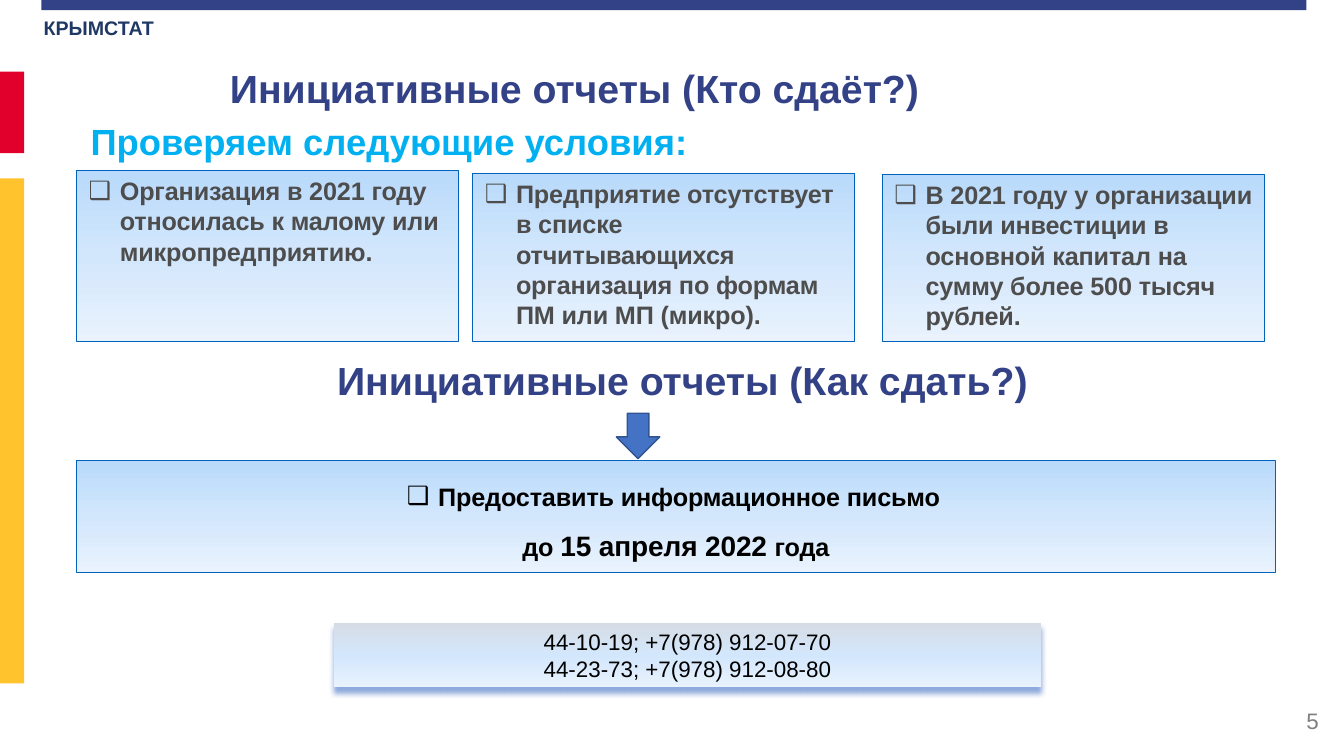
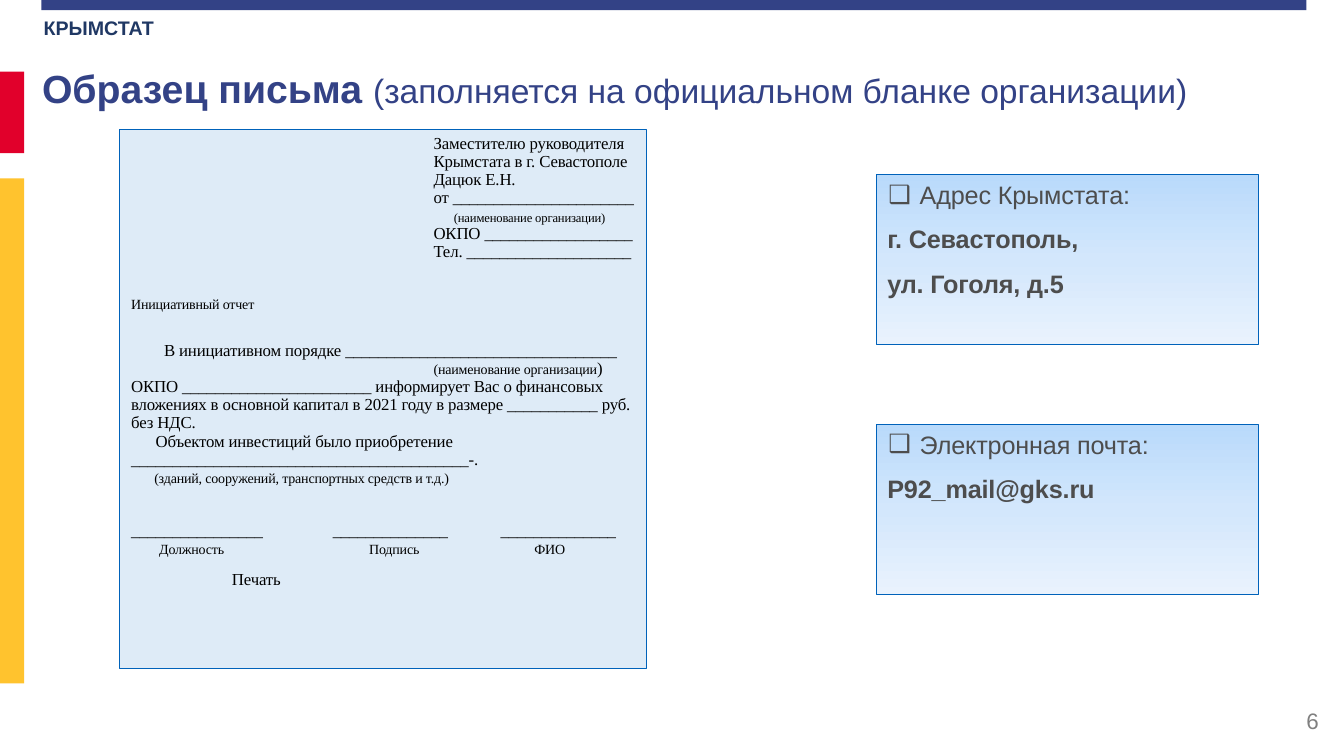
import copy
from collections import namedtuple
from dataclasses import dataclass, field

import lxml.etree
import pptx
import pptx.dml.color
import pptx.enum.shapes
import pptx.enum.text
import pptx.oxml.ns
import pptx.util

Pt = pptx.util.Pt
Shape = pptx.enum.shapes.MSO_SHAPE
Align = pptx.enum.text.PP_ALIGN
Anchor = pptx.enum.text.MSO_ANCHOR
qn = pptx.oxml.ns.qn


def style(size, color, bold=False, name="Arial", spacing=0):
    return {"font": {"size": Pt(size), "bold": bold, "name": name},
            "color": color, "spacing": spacing}


@dataclass(frozen=True)
class Theme:
    navy: str = "334286"
    red: str = "E1002B"
    yellow: str = "FFC32E"
    outline: str = "0062BA"
    letter: str = "DEEBF7"
    arrow: str = "4472C4"
    arrow_line: str = "325491"
    shadow: str = "8FAADC"
    panel: tuple = ("B9DAFB", "D3E7FC", "E9F2FD")
    phones: tuple = ("D6DCE5", "D3E7FC", "E9F2FD")
    letter_pitch: float = 12.9
    styles: dict = field(default_factory=lambda: {
        "title": style(28, "334286", True),
        "title note": style(24, "334286"),
        "subtitle": style(26, "00B0F0", True),
        "agency": style(14, "203864", True),
        "number": style(16, "808080"),
        "phone": style(16, "000000"),
        "panel": style(18, "4D4D4D", spacing=-10),
        "panel bold": style(18, "4D4D4D", True, spacing=-10),
        "task": style(18, "000000", True, spacing=-10),
        "task date": style(20, "000000", True, spacing=-10),
        "letter": style(12, "000000", name="Times New Roman", spacing=-10),
        "letter note": style(10, "000000", name="Times New Roman", spacing=-10),
        "letter small": style(9, "000000", name="Times New Roman", spacing=-10),
    })


THEME = Theme()
Box = namedtuple("Box", "left top width height")


def inside(box, left, top, width, height):
    """Box given relative to the corner of another box."""
    return Box(box.left + left, box.top + top, width, height)


def rgb(color):
    return pptx.dml.color.RGBColor.from_string(color)


# Text

def line(*spans, left=0, first=0, bullet=False, **formats):
    """One paragraph: (text, style) spans, indents in points and formats."""
    return {"spans": spans, "left": left, "first": first, "bullet": bullet,
            "formats": formats}


def bullet_line(text, name, **formats):
    return line((text, name), left=23.8, first=-22.3, bullet=True, **formats)


def write(shape, lines, **frame_formats):
    frame = shape.text_frame
    formats = {"word_wrap": True, "vertical_anchor": Anchor.TOP, **frame_formats}
    for name, value in formats.items():
        setattr(frame, name, value)
    for index, item in enumerate(lines):
        para = frame.add_paragraph() if index else frame.paragraphs[0]
        properties = para._p.get_or_add_pPr()
        properties.set("marL", str(Pt(item["left"])))
        properties.set("indent", str(Pt(item["first"])))
        if item["bullet"]:
            lxml.etree.SubElement(properties, qn("a:buFont"), typeface="Arial")
            lxml.etree.SubElement(properties, qn("a:buChar"), char="❑")
        for name, value in {"alignment": Align.LEFT, **item["formats"]}.items():
            setattr(para, name, value)
        for text, style_name in item["spans"]:
            span = para.add_run()
            span.text = text
            look = THEME.styles[style_name]
            for name, value in look["font"].items():
                setattr(span.font, name, value)
            span.font.color.rgb = rgb(look["color"])
            if look["spacing"]:
                span._r.get_or_add_rPr().set("spc", str(look["spacing"]))


def add_text(page, box, lines, **frame_formats):
    write(page.shapes.add_textbox(*map(Pt, box)), lines, **frame_formats)


# Shapes

def add_block(page, box, fill, outline=None, width=0.75, kind=Shape.RECTANGLE):
    """Preset shape; a tuple of three colours gives a top-down gradient."""
    block = page.shapes.add_shape(kind, *map(Pt, box))
    block.shadow.inherit = False
    if isinstance(fill, tuple):
        block.fill.gradient()
        block.fill.gradient_angle = 270
        stops = block._element.spPr.find(".//" + qn("a:gsLst"))
        stops.insert(1, copy.deepcopy(stops[0]))
        for index, (stop, color) in enumerate(zip(block.fill.gradient_stops, fill)):
            stop.position = index / 2
            stop.color.rgb = rgb(color)
    else:
        block.fill.solid()
        block.fill.fore_color.rgb = rgb(fill)
    if outline:
        block.line.color.rgb = rgb(outline)
        block.line.width = Pt(width)
    else:
        block.line.fill.background()
    return block


def add_panel(page, box, lines, fill=THEME.panel, **frame_formats):
    write(add_block(page, box, fill, THEME.outline), lines, **frame_formats)


def add_shadow(shape, color, size):
    effects = shape._element.spPr.find(qn("a:effectLst"))
    outer = lxml.etree.SubElement(
        effects, qn("a:outerShdw"), blurRad=str(Pt(size)), dist=str(Pt(size)),
        dir="5400000", algn="t", rotWithShape="0")
    lxml.etree.SubElement(outer, qn("a:srgbClr"), val=color)


# Regions

def add_frame(page, box, number):
    """Top band, side bands, agency name and page number."""
    bands = (((29.5, 0, 903.6, 7.2), THEME.navy),
             ((0, 51.1, 17.3, 58.3), THEME.red),
             ((0, 127.4, 17.3, 360.7), THEME.yellow))
    for place, color in bands:
        add_block(page, inside(box, *place), color)
    add_text(page, inside(box, 23.8, 11, 93.6, 17.3),
             [line(("КРЫМСТАТ", "agency"), alignment=Align.CENTER)],
             vertical_anchor=Anchor.MIDDLE, word_wrap=False)
    add_text(page, inside(box, 733, 500.4, 216, 28.8),
             [line((str(number), "number"), alignment=Align.RIGHT)],
             vertical_anchor=Anchor.MIDDLE)


def add_conditions(page, box):
    """Who reports: a heading over three condition cards."""
    add_text(page, inside(box, -31.7, 0, 774.7, 50.4),
             [line(("Инициативные отчеты (Кто сдаёт?)", "title"),
                   alignment=Align.CENTER)])
    add_text(page, inside(box, 2.9, 38.9, 774.7, 38.9),
             [line(("Проверяем следующие условия:", "subtitle"))])
    cards = (
        (0, 79.2, "Организация в 2021 году относилась к малому или "
                  "микропредприятию."),
        (283, 81.4, "Предприятие отсутствует в списке отчитывающихся "
                    "организация по формам ПМ или МП (микро)."),
        (575.5, 82.1, "В 2021 году у организации были инвестиции в основной "
                      "капитал на сумму более 500 тысяч рублей."),
    )
    for left, top, text in cards:
        add_panel(page, inside(box, left, top, 272.9, box.height - top),
                  [bullet_line(text, "panel bold")])


def add_submission(page, box):
    """How to report: a heading, an arrow, the task and the phones."""
    add_text(page, inside(box, 45.4, 0, 774.7, 50.4),
             [line(("Инициативные отчеты (Как сдать?)", "title"),
                   alignment=Align.CENTER)])
    add_block(page, inside(box, 385.6, 43.9, 31, 32.4), THEME.arrow,
              THEME.arrow_line, 1, Shape.DOWN_ARROW)
    centred = {"alignment": Align.CENTER}
    add_panel(page, inside(box, 0, 78, box.width, 79.7), [
        bullet_line("Предоставить информационное письмо ", "task",
                    line_spacing=1.5, **centred),
        line(("до ", "task"), ("15 апреля 2022 ", "task date"), ("года", "task"),
             line_spacing=1.5, **centred)])
    phones = add_block(page, inside(box, 183.6, 193.7, 505.4, 46.1), THEME.phones)
    add_shadow(phones, THEME.shadow, 4)
    write(phones, [line((text, "phone"), **centred) for text in
                   ("44-10-19; +7(978) 912-07-70", "44-23-73; +7(978) 912-08-80")])


def letter_row(text, name="letter", before=0, **indents):
    return line((text, name), line_spacing=Pt(THEME.letter_pitch),
                space_before=Pt(before), **indents)


def add_letter(page, box):
    """Sample letter, set on a fixed line pitch."""
    addressee, inset, note = 216, 8, "letter note"
    rows = [letter_row(text, left=addressee) for text in (
        "Заместителю руководителя", "Крымстата в г. Севастополе", "Дацюк Е.Н.",
        "от ______________________")]
    organisation = letter_row("(наименование организации", note, left=addressee)
    organisation["spans"] += ((")", "letter"),)
    rows += [
        letter_row("(наименование организации)", "letter small",
                   left=addressee + 14.5),
        letter_row("ОКПО __________________", left=addressee),
        letter_row("Тел. ____________________", left=addressee),
        letter_row("Инициативный отчет", note, 23.5),
        letter_row("В инициативном порядке _________________________________",
                   before=21.5, first=23.5),
        organisation,
        letter_row("ОКПО _______________________ информирует Вас о финансовых "
                   "вложениях в основной капитал в 2021 году в размере "
                   "___________ руб. без НДС."),
        letter_row("Объектом инвестиций было приобретение "
                   "_________________________________________-.", first=17.5),
        letter_row("(зданий, сооружений, транспортных средств и т.д.)", note,
                   left=16.5),
        letter_row("Печать", before=60.5, left=72),
    ]
    add_panel(page, box, rows, THEME.letter,
              margin_left=Pt(inset), margin_right=Pt(4))
    add_signatures(page, inside(box, inset, 280, box.width - 2 * inset, 26))


def add_signatures(page, box):
    """Signature lines, each with its label under it."""
    no_margins = {f"margin_{side}": 0 for side in ("left", "top", "right", "bottom")}
    fields = ((0, "________________", "Должность", 20),
              (144, "______________", "Подпись", 26),
              (264, "______________", "ФИО", 24))
    for left, rule, label, indent in fields:
        add_text(page, inside(box, left, 0, 100, box.height),
                 [letter_row(rule), letter_row(label, "letter note", left=indent)],
                 **no_margins)


def add_contacts(page, box):
    """Address and e-mail cards."""
    contacts = (("Адрес Крымстата:", ("г. Севастополь,", "ул. Гоголя, д.5")),
                ("Электронная почта:", ("P92_mail@gks.ru",)))
    height = 121.7
    for index, (heading, details) in enumerate(contacts):
        top = index * (box.height - height)
        add_panel(page, inside(box, 0, top, box.width, height),
                  [bullet_line(heading, "panel")]
                  + [line((text, "panel bold"), left=0.7, space_before=Pt(10))
                     for text in details])


# Pages

def build_conditions_page(page, box):
    add_conditions(page, inside(box, 54.7, 42.5, 848.2, 201.4))
    add_submission(page, inside(box, 54.7, 251.3, 856.1, 239.8))


def build_letter_page(page, box):
    add_text(page, inside(box, 23, 42.5, 888.5, 50.4),
             [line(("Образец письма ", "title"),
                   ("(заполняется на официальном бланке организации)",
                    "title note"))])
    add_letter(page, inside(box, 85.7, 92.6, 375.8, 385.2))
    add_contacts(page, inside(box, 626, 124.6, 272.9, 300))


def main():
    deck = pptx.Presentation()
    box = Box(0, 0, 960, 540)
    deck.slide_width, deck.slide_height = Pt(box.width), Pt(box.height)
    for number, build in enumerate((build_conditions_page, build_letter_page), 5):
        page = deck.slides.add_slide(deck.slide_layouts[6])
        add_frame(page, box, number)
        build(page, box)
    deck.save("out.pptx")


if __name__ == "__main__":
    main()
